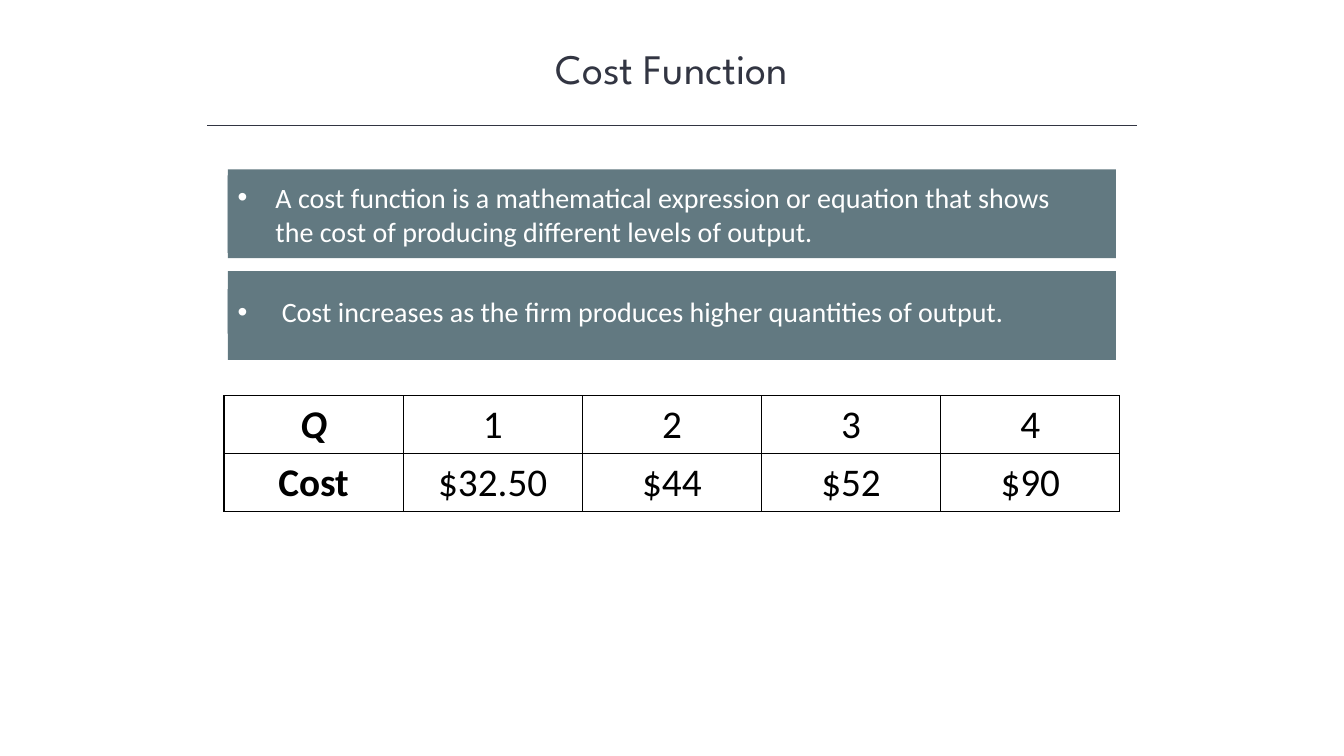
from lxml import etree
from pptx import Presentation
from pptx.dml.color import RGBColor
from pptx.enum.shapes import MSO_CONNECTOR, MSO_SHAPE
from pptx.enum.text import MSO_ANCHOR, MSO_AUTO_SIZE, PP_ALIGN
from pptx.oxml import parse_xml
from pptx.oxml.ns import nsdecls, qn
from pptx.util import Pt

CENTER, LEFT = PP_ALIGN.CENTER, PP_ALIGN.LEFT
MIDDLE = MSO_ANCHOR.MIDDLE
RECT = MSO_SHAPE.RECTANGLE
STRAIGHT = MSO_CONNECTOR.STRAIGHT
NO_FIT = MSO_AUTO_SIZE.NONE
COLORS = {"ink": "323542", "bar": "627981", "white": "FFFFFF", "black": "000000"}


def style(p, font, size, color, align):
    p.alignment = align
    p.font.name = font
    p.font.size = Pt(size)
    p.font.color.rgb = RGBColor.from_string(COLORS[color])


def add_bar(shapes, left, top, width, height):
    sp = shapes.add_shape(RECT, Pt(left), Pt(top), Pt(width), Pt(height))
    sp.shadow.inherit = False
    sp.fill.solid()
    sp.fill.fore_color.rgb = RGBColor.from_string(COLORS["bar"])
    sp.line.fill.background()
    return sp


prs = Presentation()
prs.slide_width, prs.slide_height = Pt(960), Pt(540)
s = prs.slides.add_slide(prs.slide_layouts[5])

title = s.shapes.title
title.left, title.top, title.width, title.height = Pt(120), Pt(26.6), Pt(720), Pt(44)
tf = title.text_frame
tf.text = "Cost Function"
tf.auto_size = NO_FIT
tf.vertical_anchor = MIDDLE
style(tf.paragraphs[0], "League Spartan", 30, "ink", CENTER)

rule = s.shapes.add_connector(STRAIGHT, Pt(148), Pt(89.5), Pt(812), Pt(89.5))
rule.line.color.rgb = RGBColor.from_string(COLORS["ink"])
rule.line.width = Pt(1)
etree.SubElement(rule._element.spPr, qn("a:effectLst"))

rows = [["Q", "1", "2", "3", "4"], ["Cost", "$32.50", "$44", "$52", "$90"]]
table = s.shapes.add_table(2, 5, Pt(160), Pt(282.6), Pt(640), Pt(82)).table
table.first_row = table.horz_banding = False
for i, values in enumerate(rows):
    table.rows[i].height = Pt(41)
    for j, value in enumerate(values):
        cell = table.cell(i, j)
        cell.text = value
        cell.vertical_anchor = MIDDLE
        p = cell.text_frame.paragraphs[0]
        style(p, "Calibri", 28, "black", CENTER)
        p.font.bold = j == 0
        p.font.italic = value == "Q"
        tcPr = cell._tc.get_or_add_tcPr()
        for side in ("lnL", "lnR", "lnT", "lnB"):
            tcPr.append(parse_xml(
                f'<a:{side} {nsdecls("a")} w="{Pt(1)}"><a:solidFill>'
                f'<a:srgbClr val="{COLORS["black"]}"/></a:solidFill></a:{side}>'))
        cell.fill.background()

points = [
    ("A cost function is a mathematical expression or equation that shows "
     "the cost of producing different levels of output.", 121, 125.3, 55.4, 27),
    ("Cost increases as the firm produces higher quantities of output.",
     193.7, 206.6, 31.7, 31.5),
]
for text, bar_top, text_top, text_height, indent in points:
    group = s.shapes.add_group_shape()
    add_bar(group.shapes, 162.7, bar_top, 634.3, 63.4)
    sp = add_bar(group.shapes, 162.7, text_top, 615, text_height)
    tf = sp.text_frame
    tf.word_wrap = True
    tf.vertical_anchor = MIDDLE
    tf.text = text
    p = tf.paragraphs[0]
    style(p, "Calibri", 20, "white", LEFT)
    pPr = p._p.get_or_add_pPr()
    pPr.set("marL", str(Pt(indent)))
    pPr.set("indent", str(-Pt(indent)))
    pPr.insert(0, parse_xml(f'<a:buFont {nsdecls("a")} typeface="Arial"/>'))
    pPr.insert(1, parse_xml(f'<a:buChar {nsdecls("a")} char="•"/>'))

prs.save("out.pptx")
